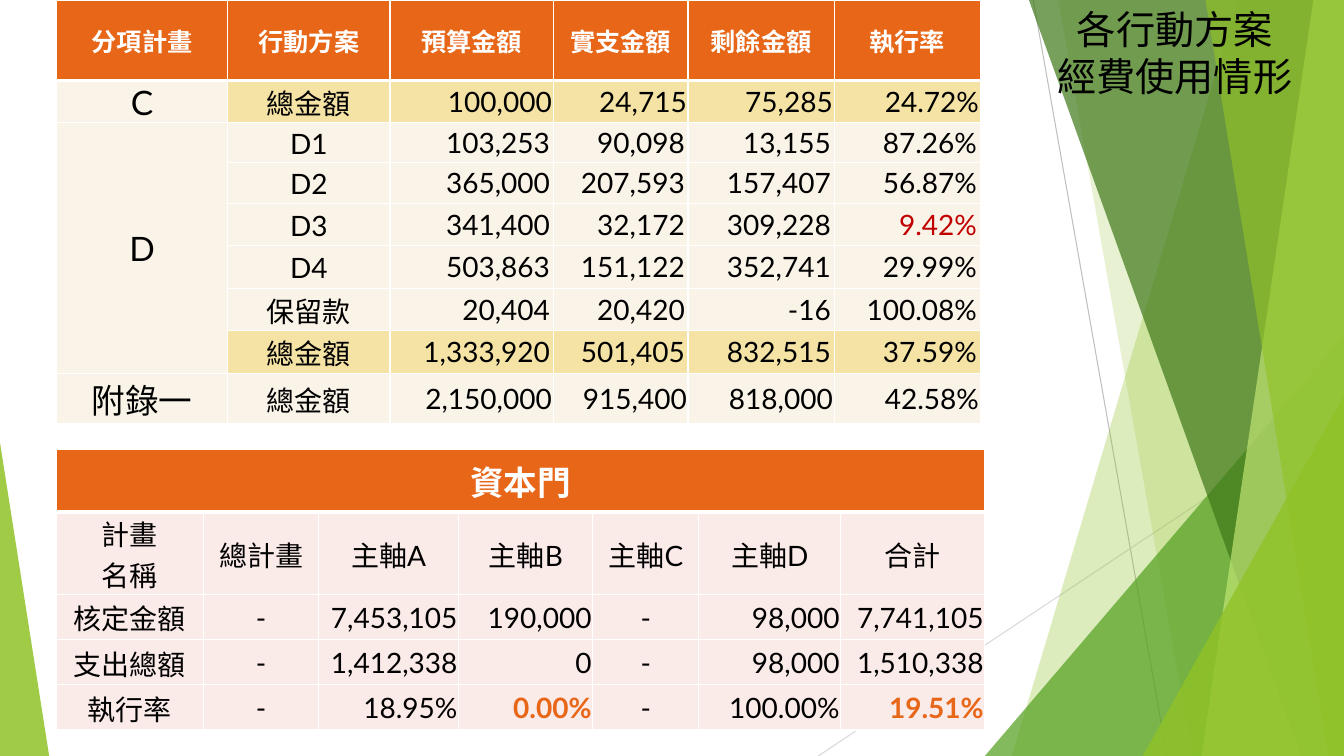
from lxml.etree import SubElement
from pptx import Presentation
from pptx.dml.color import RGBColor
from pptx.enum.shapes import MSO_CONNECTOR as Connector, MSO_SHAPE as Shape
from pptx.enum.text import MSO_ANCHOR as Anchor, MSO_AUTO_SIZE as AutoSize, PP_ALIGN as Align
from pptx.oxml.ns import qn
from pptx.util import Cm, Pt

WHITE = RGBColor(0xFF, 0xFF, 0xFF)
BLACK = RGBColor(0x00, 0x00, 0x00)
ORANGE = RGBColor(0xE7, 0x66, 0x18)
CREAM = RGBColor(0xFA, 0xF3, 0xE8)
GOLD = RGBColor(0xF5, 0xE3, 0xA5)
PINK = RGBColor(0xFA, 0xEA, 0xE8)
RED = RGBColor(0xC0, 0x00, 0x00)
LIME = RGBColor(0x90, 0xC2, 0x26)
GREEN = RGBColor(0x54, 0xA0, 0x21)
FOREST = RGBColor(0x3F, 0x78, 0x19)
PALE_LIME = RGBColor(0xC0, 0xE4, 0x74)
GREY = RGBColor(0xBF, 0xBF, 0xBF)
LIGHT_GREY = RGBColor(0xD9, 0xD9, 0xD9)

SLIDE_WIDTH, SLIDE_HEIGHT = 33.87, 19.05

BUDGET_COLUMNS = [4.32, 4.09, 4.11, 3.4, 3.68, 3.68]
BUDGET_HEIGHTS = [2.03] + [1.02] * 3 + [1.07] * 4 + [1.02]
BUDGET = [
    ["分項計畫", "行動方案", "預算金額", "實支金額", "剩餘金額", "執行率"],
    ["C", "總金額", "100,000", "24,715", "75,285", "24.72%"],
    ["D", "D1", "103,253", "90,098", "13,155", "87.26%"],
    ["", "D2", "365,000", "207,593", "157,407", "56.87%"],
    ["", "D3", "341,400", "32,172", "309,228", "9.42%"],
    ["", "D4", "503,863", "151,122", "352,741", "29.99%"],
    ["", "保留款", "20,404", "20,420", "-16", "100.08%"],
    ["", "總金額", "1,333,920", "501,405", "832,515", "37.59%"],
    ["附錄一", "總金額", "2,150,000", "915,400", "818,000", "42.58%"],
]
CAPITAL_COLUMNS = [3.71, 2.9, 3.53, 3.38, 2.67, 3.58, 3.63]
CAPITAL_HEIGHTS = [1.57, 1.85] + [1.14] * 3
CAPITAL = [
    ["資本門"] + [""] * 6,
    ["計畫\n名稱", "總計畫", "主軸A", "主軸B", "主軸C", "主軸D", "合計"],
    ["核定金額", "-", "7,453,105", "190,000", "-", "98,000", "7,741,105"],
    ["支出總額", "-", "1,412,338", "0", "-", "98,000", "1,510,338"],
    ["執行率", "-", "18.95%", "0.00%", "-", "100.00%", "19.51%"],
]


def apply(target, formats):
    for attribute, value in formats.items():
        setattr(target, attribute, value)


def paint(shape, color, opacity):
    shape.shadow.inherit = False
    shape.fill.solid()
    shape.fill.fore_color.rgb = color
    shape.line.fill.background()
    tint = shape.fill._xPr.find(qn("a:solidFill"))[0]
    SubElement(tint, qn("a:alpha"), val=str(opacity * 1000))


def add_ray(slide, start, end, color):
    ray = slide.shapes.add_connector(Connector.STRAIGHT, *map(Cm, start + end))
    ray.line.color.rgb = color
    ray.line.width = Pt(0.75)
    SubElement(ray._element.spPr, qn("a:effectLst"))


def add_corner(slide, left, top, width, height, peak, color, opacity):
    corner = slide.shapes.add_shape(Shape.ISOSCELES_TRIANGLE, *map(Cm, (left, top, width, height)))
    corner.adjustments[0] = peak
    paint(corner, color, opacity)


def add_blade(slide, top_x, bottom_x, top, right, bottom, color, opacity):
    outline = slide.shapes.build_freeform(Cm(top_x), Cm(top))
    outline.add_line_segments([(Cm(x), Cm(y)) for x, y in
                               [(right, top), (right, bottom), (bottom_x, bottom)]])
    paint(outline.convert_to_shape(), color, opacity)


def draw_facets(slide, left, top, width, height):
    right, bottom = left + width, top + height
    add_ray(slide, (left + 1.22, top), (left + 4.59, bottom), GREY)
    add_ray(slide, (right, top + 10.24), (left - 4.2, bottom), LIGHT_GREY)

    def blades(facets):
        for top_x, bottom_x, color, opacity in facets:
            add_blade(slide, left + top_x, left + bottom_x, top, right, bottom, color, opacity)

    def corner(side, rise, color, opacity):
        add_corner(slide, right - side, bottom - rise, side, rise, 1, color, opacity)

    blades([(6.37, 0.68, LIME, 30), (1.85, 5.23, LIME, 20)])
    corner(9.05, 10.59, GREEN, 72)
    blades([(1.11, 7.97, FOREST, 70), (8.28, 5.46, PALE_LIME, 70), (5.56, 8.66, LIME, 65)])
    corner(5.07, 9.07, LIME, 80)


def is_number(text):
    return text.strip("-%").replace(",", "").replace(".", "").isdigit()


def add_borders(cell, row):
    properties = cell._tc.get_or_add_tcPr()
    thick = {0: "lnB", 1: "lnT"}.get(row)
    for side in ("lnL", "lnR", "lnT", "lnB"):
        border = SubElement(properties, qn(f"a:{side}"), w=str(Pt(3 if side == thick else 1)))
        SubElement(SubElement(border, qn("a:solidFill")), qn("a:srgbClr"), val=str(WHITE))


def format_cell(cell, text, row, fill, size, color=BLACK, bold=False, side=0.03, edge=0.03, base=0):
    add_borders(cell, row)
    cell.fill.solid()
    cell.fill.fore_color.rgb = fill
    apply(cell, {"vertical_anchor": Anchor.MIDDLE, "margin_left": Cm(side), "margin_right": Cm(side),
                 "margin_top": Cm(edge), "margin_bottom": Cm(base), "text": text})
    for paragraph in cell.text_frame.paragraphs:
        paragraph.alignment = Align.RIGHT if is_number(text) else Align.CENTER
        for run in paragraph.runs:
            apply(run.font, {"name": "Lato", "size": Pt(size), "bold": bold})
            run.font.color.rgb = color


def add_grid(slide, left, top, columns, heights, rows, span, style):
    box = map(Cm, (left, top, sum(columns), sum(heights)))
    table = slide.shapes.add_table(len(rows), len(columns), *box).table
    table.horz_banding = False
    for column, width in zip(table.columns, columns):
        column.width = Cm(width)
    for line, height in zip(table.rows, heights):
        line.height = Cm(height)
    for row, texts in enumerate(rows):
        for column, text in enumerate(texts):
            format_cell(table.cell(row, column), text, row, **style(row, column))
    first, last = span
    table.cell(*first).merge(table.cell(*last))


def budget_style(row, column):
    if row == 0:
        return {"fill": ORANGE, "size": 18, "color": WHITE, "bold": True}
    style = {"fill": GOLD if row in (1, 7) and column else CREAM, "size": 20 if column else 24}
    if 2 <= row <= 7 and column >= 2:
        style.update(side=0.08, edge=0.05, base=0.05)
    if (row, column) == (4, 5):
        style["color"] = RED
    return style


def capital_style(row, column):
    if row == 0:
        return {"fill": ORANGE, "size": 24, "color": WHITE, "bold": True}
    style = {"fill": PINK, "size": 20}
    if row == 4 and column in (3, 6):
        style.update(color=ORANGE, bold=True)
    return style


def place_title(slide, left, top, width, height):
    title = slide.shapes.title
    apply(title, {"left": Cm(left), "top": Cm(top), "width": Cm(width), "height": Cm(height)})
    frame = title.text_frame
    frame.text = "各行動方案\n經費使用情形"
    apply(frame, {"word_wrap": True, "auto_size": AutoSize.NONE, "vertical_anchor": Anchor.TOP})
    for paragraph in frame.paragraphs:
        paragraph.alignment = Align.CENTER
        font = paragraph.runs[0].font
        apply(font, {"name": "Lato", "size": Pt(28)})
        font.color.rgb = BLACK
    slide.shapes._spTree.append(title._element)


def build_expense_slide(deck):
    slide = deck.slides.add_slide(deck.slide_layouts[5])
    draw_facets(slide, 24.82, 0, SLIDE_WIDTH - 24.82, SLIDE_HEIGHT)
    add_corner(slide, 0, 11.15, 1.24, 7.9, 0, LIME, 85)
    add_grid(slide, 1.42, 0, BUDGET_COLUMNS, BUDGET_HEIGHTS, BUDGET, ((2, 0), (7, 0)), budget_style)
    add_grid(slide, 1.42, 11.33, CAPITAL_COLUMNS, CAPITAL_HEIGHTS, CAPITAL, ((0, 0), (0, 6)), capital_style)
    place_title(slide, 26.14, 0, 6.93, 2.64)


def main():
    deck = Presentation()
    apply(deck, {"slide_width": Cm(SLIDE_WIDTH), "slide_height": Cm(SLIDE_HEIGHT)})
    build_expense_slide(deck)
    deck.save("out.pptx")


if __name__ == "__main__":
    main()
